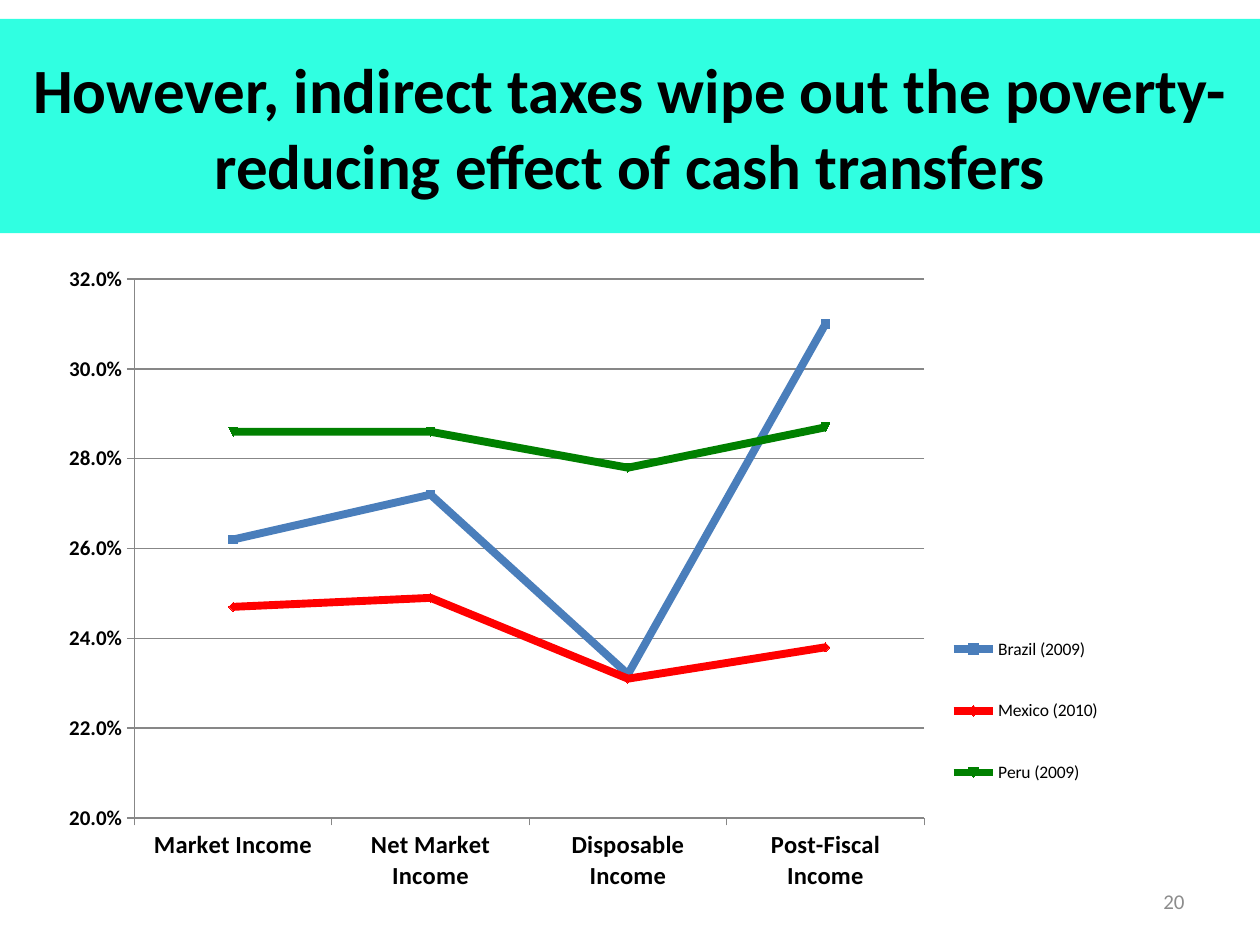
import lxml.etree
import pptx
import pptx.chart.data
import pptx.dml.color
import pptx.enum.chart
import pptx.enum.text
import pptx.oxml.ns
import pptx.util

Pt = pptx.util.Pt
RGB = pptx.dml.color.RGBColor.from_string
qn = pptx.oxml.ns.qn
ALIGN = pptx.enum.text.PP_ALIGN

THEME = {
    "font": "Calibri", "text": "000000", "banner": "30FFE1",
    "muted": "8C8C8C", "grid": "878787",
    "title_size": 36, "category_size": 14, "value_size": 12,
    "legend_size": 10, "number_size": 12,
}


def write(tf, text, size, color, align, bold=False):
    tf.word_wrap = True
    tf.auto_size = pptx.enum.text.MSO_AUTO_SIZE.NONE
    tf.vertical_anchor = pptx.enum.text.MSO_ANCHOR.MIDDLE
    p = tf.paragraphs[0]
    p.alignment = align
    r = p.add_run()
    r.text = text
    r.font.name, r.font.size, r.font.bold = THEME["font"], Pt(size), bold
    r.font.color.rgb = RGB(color)


def place(parent, index, target=None, **fractions):
    """Fix a chart part at fractions of the chart area."""
    for old in parent.findall(qn("c:layout")):
        parent.remove(old)
    layout = lxml.etree.Element(qn("c:layout"))
    manual = lxml.etree.SubElement(layout, qn("c:manualLayout"))
    values = {"layoutTarget": target} if target else {}
    values.update(xMode="edge", yMode="edge", **fractions)
    for tag, value in values.items():
        lxml.etree.SubElement(manual, qn("c:" + tag)).set("val", str(value))
    parent.insert(index, layout)


prs = pptx.Presentation()
prs.slide_width, prs.slide_height = Pt(720), Pt(540)
s = prs.slides.add_slide(prs.slide_layouts[5])

# Title banner
sp = s.shapes.title
sp.left, sp.top, sp.width, sp.height = Pt(0), Pt(10.8), Pt(720), Pt(122.4)
sp.fill.solid()
sp.fill.fore_color.rgb = RGB(THEME["banner"])
write(sp.text_frame,
      "However, indirect taxes wipe out the poverty-reducing effect of cash transfers",
      size=THEME["title_size"], color=THEME["text"], align=ALIGN.CENTER, bold=True)

# Poverty rates by income concept
data = pptx.chart.data.CategoryChartData(number_format="0.0%")
data.categories = ["Market Income", "Net Market Income",
                   "Disposable Income", "Post-Fiscal Income"]
countries = [
    ("Brazil (2009)", "4A7EBB", (0.262, 0.272, 0.232, 0.31)),
    ("Mexico (2010)", "FF0000", (0.247, 0.249, 0.231, 0.238)),
    ("Peru (2009)", "008000", (0.286, 0.286, 0.278, 0.287)),
]
for name, color, rates in countries:
    data.add_series(name, rates)
chart = s.shapes.add_chart(pptx.enum.chart.XL_CHART_TYPE.LINE_MARKERS,
                           Pt(28), Pt(144.7), Pt(610), Pt(371), data).chart
chart.has_title = False
chart.font.name = THEME["font"]
chart.font.size = Pt(THEME["legend_size"])
chart.font.color.rgb = RGB(THEME["text"])
chart.plots[0].vary_by_categories = False

for series, (name, color, rates) in zip(chart.plots[0].series, countries):
    series.smooth = False
    series.format.line.width = Pt(4.5)
    series.format.line.color.rgb = RGB(color)
    series.marker.size = 5
    series.marker.format.fill.solid()
    series.marker.format.fill.fore_color.rgb = RGB(color)
    series.marker.format.line.color.rgb = RGB(color)

# Axes
for axis, size in ((chart.category_axis, THEME["category_size"]),
                   (chart.value_axis, THEME["value_size"])):
    axis.major_tick_mark = pptx.enum.chart.XL_TICK_MARK.OUTSIDE
    axis.minor_tick_mark = pptx.enum.chart.XL_TICK_MARK.NONE
    axis.format.line.color.rgb = RGB(THEME["grid"])
    font = axis.tick_labels.font
    font.name, font.size, font.bold = THEME["font"], Pt(size), True
    font.color.rgb = RGB(THEME["text"])
axis = chart.value_axis
axis.minimum_scale, axis.maximum_scale, axis.major_unit = 0.2, 0.32, 0.02
axis.tick_labels.number_format = "0.0%"
axis.tick_labels.number_format_is_linked = False
axis.has_major_gridlines = True
axis.major_gridlines.format.line.color.rgb = RGB(THEME["grid"])

# Legend and plot position
chart.has_legend = True
chart.legend.position = pptx.enum.chart.XL_LEGEND_POSITION.RIGHT
chart.legend.include_in_layout = False
plot_area = chart.plots[0]._element.getparent()
place(plot_area, 0, target="inner", x=0.08, y=0.04, w=0.74, h=0.83)
place(chart.legend._element, 1, x=0.83, y=0.53, w=0.17, h=0.35)

# Slide number
sp = s.shapes.add_textbox(Pt(516), Pt(500.5), Pt(168), Pt(28.8))
write(sp.text_frame, "20", size=THEME["number_size"], color=THEME["muted"],
      align=ALIGN.RIGHT)

prs.save("out.pptx")
